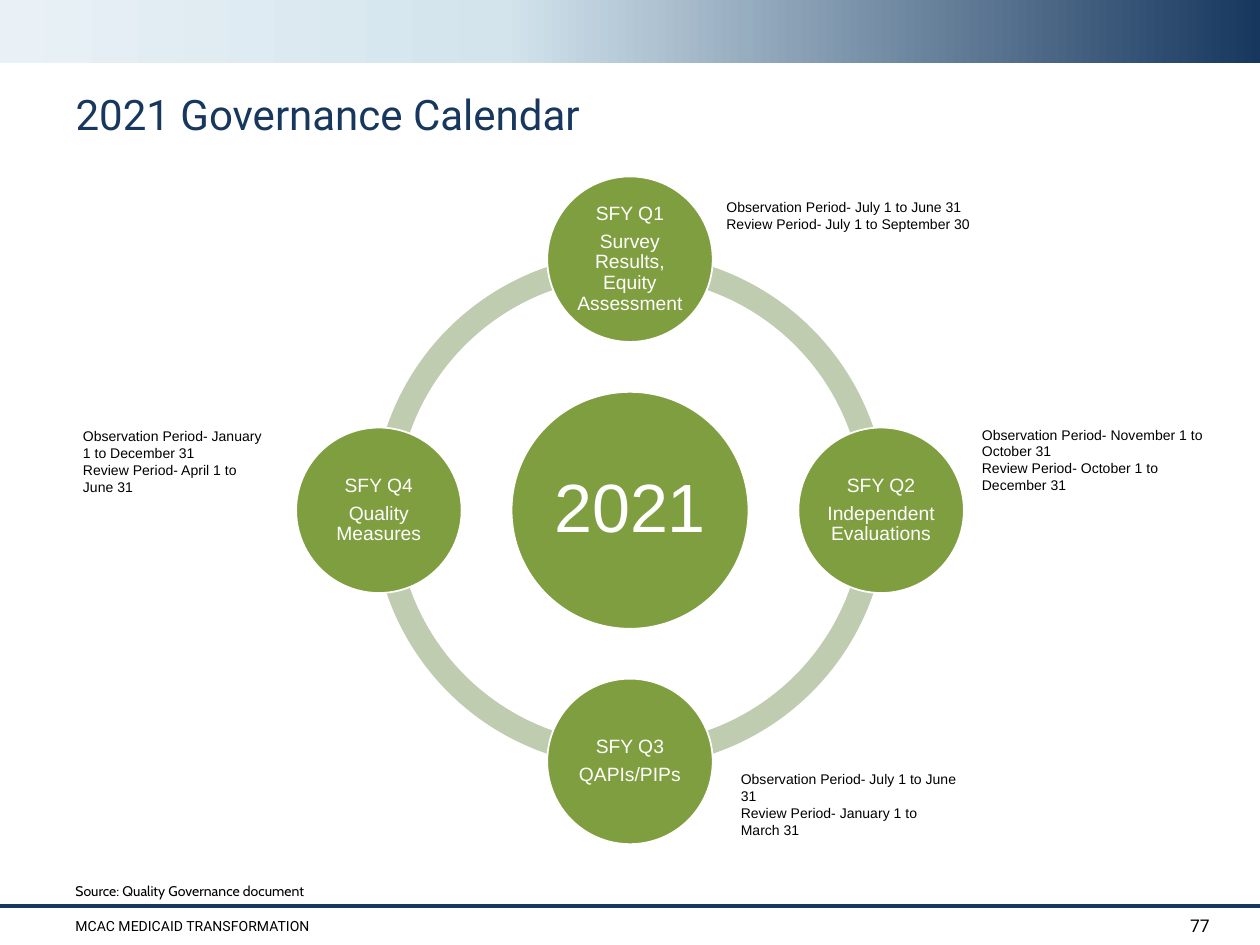
from copy import deepcopy
from math import cos, radians, sin

from pptx import Presentation
from pptx.dml.color import RGBColor
from pptx.enum.shapes import MSO_CONNECTOR, MSO_SHAPE
from pptx.enum.text import MSO_ANCHOR, MSO_AUTO_SIZE, PP_ALIGN
from pptx.oxml.ns import qn
from pptx.oxml.xmlchemy import OxmlElement
from pptx.util import Pt

NAVY = RGBColor(0x17, 0x37, 0x5E)
PALE_BLUE = RGBColor(0xD3, 0xE4, 0xED)
ICE = RGBColor(0xE9, 0xF1, 0xF6)
GREEN = RGBColor(0x7F, 0x9E, 0x3F)
SAGE = RGBColor(0xC0, 0xCC, 0xB0)
WHITE = RGBColor(0xFF, 0xFF, 0xFF)
BLACK = RGBColor(0x00, 0x00, 0x00)

PAGE_WIDTH, PAGE_HEIGHT = 720, 540
CENTER_X, CENTER_Y = 360, 291.6
RING_SIZE, ORBIT_RADIUS = 293.8, 143.5
HUB_SIZE, NODE_SIZE = 135.4, 94.6
FOOTER_TOP = 517.7

QUARTERS = [
    ("SFY Q1", "Survey Results, Equity Assessment"),
    ("SFY Q2", "Independent Evaluations"),
    ("SFY Q3", "QAPIs/PIPs"),
    ("SFY Q4", "Quality Measures"),
]
PERIODS = [
    (408, 110, 173.5, "July 1 to June 31", "July 1 to September 30"),
    (554, 240, 153.4, "November 1 to October 31", "October 1 to December 31"),
    (416.2, 437, 137.5, "July 1 to June 31", "January 1 to March 31"),
    (40.3, 241, 118, "January 1 to December 31", "April 1 to June 31"),
]


def write_text(frame, lines, font="Arial", size=8, color=BLACK, align=PP_ALIGN.LEFT,
               anchor=MSO_ANCHOR.TOP, line_spacing=1.0, gap=0):
    frame.word_wrap = True
    frame.auto_size = MSO_AUTO_SIZE.NONE
    frame.vertical_anchor = anchor
    for index, line in enumerate(lines):
        para = frame.paragraphs[0] if index == 0 else frame.add_paragraph()
        para.alignment = align
        para.line_spacing = line_spacing
        para.space_before = Pt(gap if index else 0)
        span = para.add_run()
        span.text = line
        span.font.name = font
        span.font.size = Pt(size)
        span.font.color.rgb = color


class CalendarPage:
    def __init__(self, page):
        self.page = page

    def title(self, text):
        box = self.page.shapes.title
        box.left, box.top, box.width, box.height = Pt(36), Pt(50.4), Pt(648), Pt(43.2)
        write_text(box.text_frame, [text], font="Roboto", size=24, color=NAVY, line_spacing=0.9)

    def text(self, left, top, width, height, lines, **style):
        box = self.page.shapes.add_textbox(Pt(left), Pt(top), Pt(width), Pt(height))
        write_text(box.text_frame, lines, **style)

    def shape(self, kind, left, top, width, height):
        shape = self.page.shapes.add_shape(kind, Pt(left), Pt(top), Pt(width), Pt(height))
        shape.shadow.inherit = False
        shape.line.fill.background()
        return shape

    def centered(self, kind, x, y, size, color):
        shape = self.shape(kind, x - size / 2, y - size / 2, size, size)
        shape.fill.solid()
        shape.fill.fore_color.rgb = color
        return shape

    def banner(self, height, colors):
        band = self.shape(MSO_SHAPE.RECTANGLE, 0, 0, PAGE_WIDTH, height)
        band.fill.gradient()
        band.fill.gradient_angle = 180
        stop_list = band._element.spPr.find(".//" + qn("a:gsLst"))
        stop_list.append(deepcopy(stop_list[-1]))
        for stop, (position, color) in zip(band.fill.gradient_stops, colors):
            stop.position = position
            stop.color.rgb = color

    def arc(self, start, end):
        arc = self.centered(MSO_SHAPE.BLOCK_ARC, CENTER_X, CENTER_Y, RING_SIZE, SAGE)
        arc.adjustments[0] = start
        arc.adjustments[1] = end
        arc.adjustments[2] = 0.046

    def circle(self, x, y, diameter, lines, size, inset):
        circle = self.centered(MSO_SHAPE.OVAL, x, y, diameter, GREEN)
        circle.line.color.rgb = WHITE
        circle.line.width = Pt(1)
        frame = circle.text_frame
        frame.margin_left = frame.margin_right = Pt(inset)
        frame.margin_top = frame.margin_bottom = Pt(inset)
        write_text(frame, lines, size=size, color=WHITE, align=PP_ALIGN.CENTER,
                   anchor=MSO_ANCHOR.MIDDLE, line_spacing=0.9, gap=4)

    def rule(self, y):
        line = self.page.shapes.add_connector(
            MSO_CONNECTOR.STRAIGHT, Pt(0), Pt(y), Pt(PAGE_WIDTH), Pt(y))
        line.line.color.rgb = NAVY
        line.line.width = Pt(2.25)
        line._element.spPr.append(OxmlElement("a:effectLst"))


def main():
    deck = Presentation()
    deck.slide_width, deck.slide_height = Pt(PAGE_WIDTH), Pt(PAGE_HEIGHT)
    calendar = CalendarPage(deck.slides.add_slide(deck.slide_layouts[5]))

    calendar.banner(36, [(0, NAVY), (0.6, PALE_BLUE), (1, ICE)])
    calendar.rule(FOOTER_TOP)
    calendar.title("2021 Governance Calendar")
    calendar.text(36, 491.8, 244, 25.9, ["Source: Quality Governance document"],
                  font="Cabin", anchor=MSO_ANCHOR.BOTTOM)

    for start in (108, 54, 0, 162):
        calendar.arc(start, (start + 54) % 216)
    calendar.circle(CENTER_X, CENTER_Y, HUB_SIZE, ["2021"], size=39, inset=3.6)
    for index, lines in enumerate(QUARTERS):
        angle = radians(index * 90 - 90)
        calendar.circle(CENTER_X + ORBIT_RADIUS * cos(angle),
                        CENTER_Y + ORBIT_RADIUS * sin(angle),
                        NODE_SIZE, lines, size=11, inset=1.4)

    calendar.text(36, FOOTER_TOP, 605, 22.3, ["MCAC MEDICAID TRANSFORMATION"],
                  font="Roboto", anchor=MSO_ANCHOR.MIDDLE)
    calendar.text(653.8, FOOTER_TOP, 44.6, 22.3, ["77"], font="Roboto", size=10,
                  align=PP_ALIGN.RIGHT, anchor=MSO_ANCHOR.MIDDLE)
    for index, (left, top, width, observation, review) in enumerate(PERIODS):
        calendar.text(left, top, width, 46 if index else 26.6,
                      [f"Observation Period- {observation}", f"Review Period- {review}"])

    deck.save("out.pptx")


if __name__ == "__main__":
    main()
